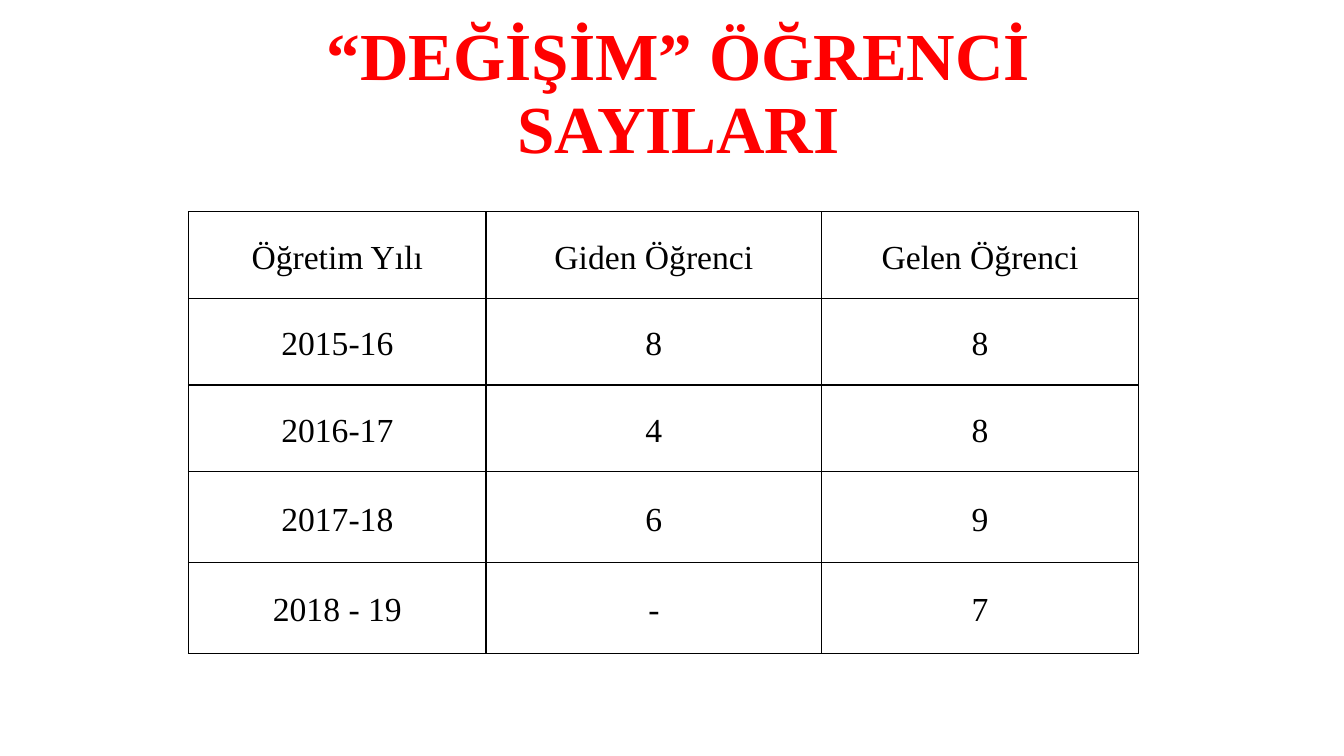
from lxml import etree
from pptx import Presentation
from pptx import util as u
from pptx.dml.color import RGBColor
from pptx.enum import text
from pptx.oxml import ns


def style(para, size, color, space, bold=False):
    para.alignment = text.PP_ALIGN.CENTER
    para.line_spacing = space
    for run in para.runs:
        run.font.name = "Times New Roman"
        run.font.size = u.Pt(size)
        run.font.bold = bold
        run.font.color.rgb = RGBColor.from_string(color)


def border(cell, color, width):
    props = cell._tc.get_or_add_tcPr()
    for i, side in enumerate(("lnL", "lnR", "lnT", "lnB")):
        line = etree.Element(ns.qn("a:" + side), w=str(u.Pt(width)))
        fill = etree.SubElement(line, ns.qn("a:solidFill"))
        etree.SubElement(fill, ns.qn("a:srgbClr"), val=color)
        props.insert(i, line)


prs = Presentation()
prs.slide_width = u.Inches(13.33)
prs.slide_height = u.Inches(7.5)
slide = prs.slides.add_slide(prs.slide_layouts[6])

# Title
title = slide.shapes.add_textbox(
    u.Inches(2.48), u.Inches(0.17), u.Inches(8.5), u.Inches(1.55))
frame = title.text_frame
frame.text = "“DEĞİŞİM” ÖĞRENCİ SAYILARI"
frame.word_wrap = True
frame.vertical_anchor = text.MSO_ANCHOR.MIDDLE
style(frame.paragraphs[0], 48, "FF0000", 0.9, bold=True)

# Student numbers by year
rows = [
    ("Öğretim Yılı", "Giden Öğrenci", "Gelen Öğrenci"),
    ("2015-16", "8", "8"),
    ("2016-17", "4", "8"),
    ("2017-18", "6", "9"),
    ("2018 - 19", "-", "7"),
]
widths = [2.95, 3.33, 3.14]
heights = [0.86, 0.86, 0.86, 0.9, 0.9]
table = slide.shapes.add_table(
    len(rows), len(widths), u.Inches(1.87), u.Inches(2.1),
    u.Inches(sum(widths)), u.Inches(sum(heights))).table
for col, width in zip(table.columns, widths):
    col.width = u.Inches(width)
for row, height, words in zip(table.rows, heights, rows):
    row.height = u.Inches(height)
    for cell, word in zip(row.cells, words):
        cell.text_frame.text = word
        cell.vertical_anchor = text.MSO_ANCHOR.MIDDLE
        cell.margin_left = cell.margin_right = u.Inches(0.07)
        cell.margin_top = cell.margin_bottom = 0
        cell.fill.background()
        style(cell.text_frame.paragraphs[0], 24, "000000", 1.15)
        border(cell, "000000", 1)

prs.save("out.pptx")
